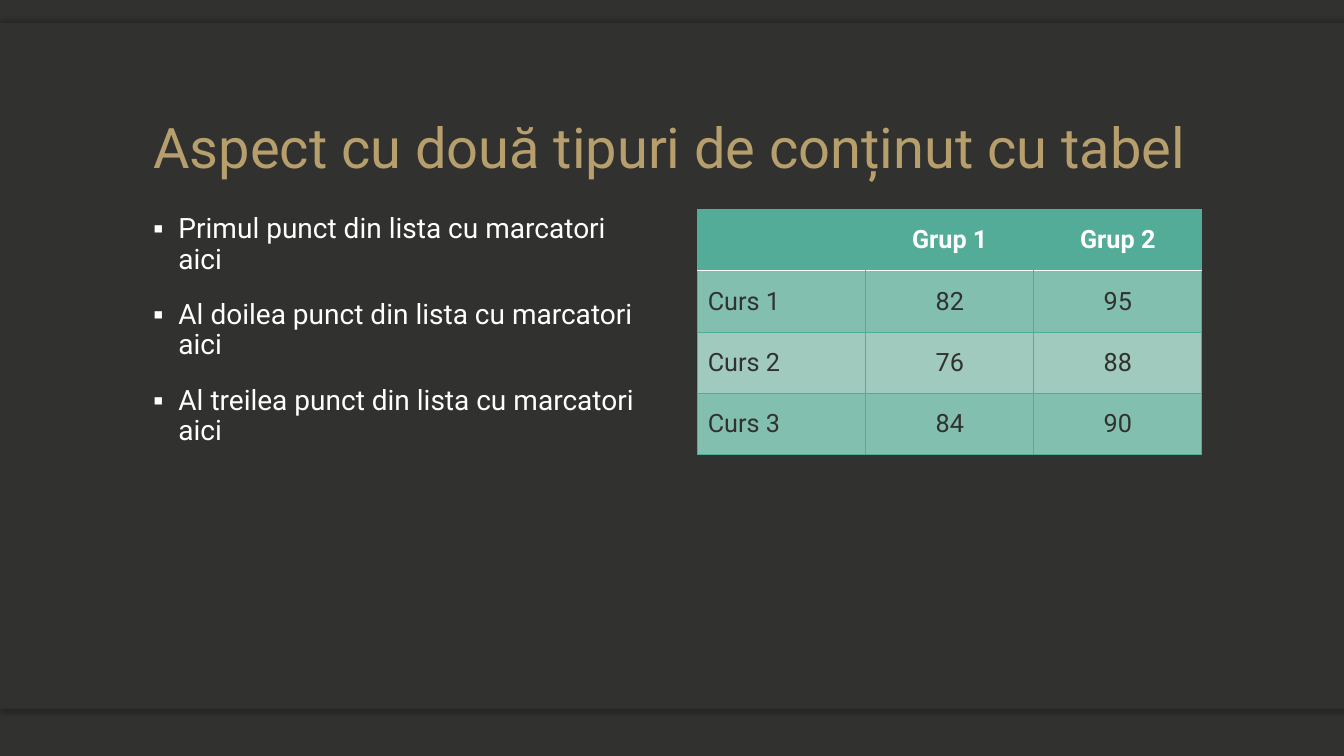
from lxml import etree
from pptx import Presentation, util as u
from pptx.dml.color import RGBColor
from pptx.enum import shapes, text
from pptx.oxml import parse_xml
from pptx.oxml.ns import qn

DARK = RGBColor(0x31, 0x31, 0x2F)
GOLD = RGBColor(0xB7, 0x9E, 0x6D)
WHITE = RGBColor(0xFF, 0xFF, 0xFF)
TEAL = RGBColor(0x52, 0xAC, 0x97)
MID = RGBColor(0x82, 0xBF, 0xAF)
PALE = RGBColor(0x9F, 0xCA, 0xBD)
NS = 'xmlns:a="http://schemas.openxmlformats.org/drawingml/2006/main"'


def style(font, color, **form):
    font.color.rgb = color
    for key, val in {"name": "Roboto", **form}.items():
        setattr(font, key, val)


def border(cell, lines):
    props = cell._tc.get_or_add_tcPr()
    for i, side in enumerate("LRTB"):
        color, width = lines.get(side, (None, 0))
        fill = (f'<a:solidFill><a:srgbClr val="{color}"/></a:solidFill>'
                if color else "<a:noFill/>")
        props.insert(i, parse_xml(
            f'<a:ln{side} {NS} w="{u.Pt(width)}">{fill}</a:ln{side}>'))


deck = Presentation()
deck.slide_width, deck.slide_height = u.Inches(13.33), u.Inches(7.5)
slide = deck.slides.add_slide(deck.slide_layouts[1])
slide.background.fill.solid()
slide.background.fill.fore_color.rgb = DARK
title, body = slide.placeholders

# Panel with a soft shadow along its lower and upper edge
for top, high, turn in ((6.54, 0.49, 90), (0.23, 0.49, 270), (0.23, 6.8, None)):
    panel = slide.shapes.add_shape(
        shapes.MSO_SHAPE.RECTANGLE, 0, u.Inches(top), deck.slide_width, u.Inches(high))
    panel.fill.solid()
    panel.fill.fore_color.rgb = DARK
    panel.line.fill.background()
    panel.shadow.inherit = False
    if turn is not None:
        panel.element.spPr.find(qn("a:effectLst")).append(parse_xml(
            f'<a:outerShdw {NS} blurRad="{u.Pt(4)}" dist="{u.Pt(2)}" '
            f'dir="{turn * 60000}" algn="t" rotWithShape="0">'
            '<a:srgbClr val="000000"><a:alpha val="25000"/></a:srgbClr></a:outerShdw>'))
    title.element.addprevious(panel.element)

# Title and bullet list
for box, place, anchor in (
        (title, (1.42, 0.46, 10.5, 1.38), text.MSO_ANCHOR.BOTTOM),
        (body, (1.42, 2.08, 5, 4.67), text.MSO_ANCHOR.TOP)):
    box.left, box.top, box.width, box.height = map(u.Inches, place)
    frame = box.text_frame
    frame.word_wrap = True
    frame.auto_size = text.MSO_AUTO_SIZE.NONE
    frame.vertical_anchor = anchor

title.text_frame.text = "Aspect cu două tipuri de conținut cu tabel"
head = title.text_frame.paragraphs[0]
head.alignment = text.PP_ALIGN.LEFT
head.line_spacing = 0.9
style(head.font, GOLD, size=u.Pt(40))

body.text_frame.text = "\n".join(
    f"{rank} punct din lista cu marcatori aici"
    for rank in ("Primul", "Al doilea", "Al treilea"))
for i, para in enumerate(body.text_frame.paragraphs):
    props = para._p.get_or_add_pPr()
    props.set("marL", str(u.Inches(0.25)))
    props.set("indent", str(-u.Inches(0.25)))
    etree.SubElement(props, qn("a:buSzPct"), val="90000")
    etree.SubElement(props, qn("a:buFont"), typeface="Roboto")
    etree.SubElement(props, qn("a:buChar"), char="▪")
    para.line_spacing = 0.9
    para.space_before = u.Pt(18 if i else 0)
    style(para.font, WHITE, size=u.Pt(20))

# Table of scores
rows = (("", "Grup 1", "Grup 2"), ("Curs 1", "82", "95"),
        ("Curs 2", "76", "88"), ("Curs 3", "84", "90"))
table = slide.shapes.add_table(
    4, 3, u.Inches(6.92), u.Inches(2.08), u.Inches(5), u.Inches(2.43)).table
thin, rule = (TEAL, 0.5), (WHITE, 1)
for r, row in enumerate(rows):
    for c, word in enumerate(row):
        cell = table.cell(r, c)
        cell.text = word
        cell.vertical_anchor = text.MSO_ANCHOR.MIDDLE
        cell.fill.solid()
        cell.fill.fore_color.rgb = (TEAL, MID, PALE, MID)[r]
        para = cell.text_frame.paragraphs[0]
        para.alignment = text.PP_ALIGN.CENTER if c else text.PP_ALIGN.LEFT
        style(para.font, DARK if r else WHITE, size=u.Pt(18), bold=r == 0)
        if r:
            lines = dict.fromkeys("LRTB", thin)
            if r == 1:
                lines["T"] = rule
        else:
            lines = {"T": thin, "B": rule}
            if c != 1:
                lines["R" if c else "L"] = thin
        border(cell, lines)

deck.save("out.pptx")
